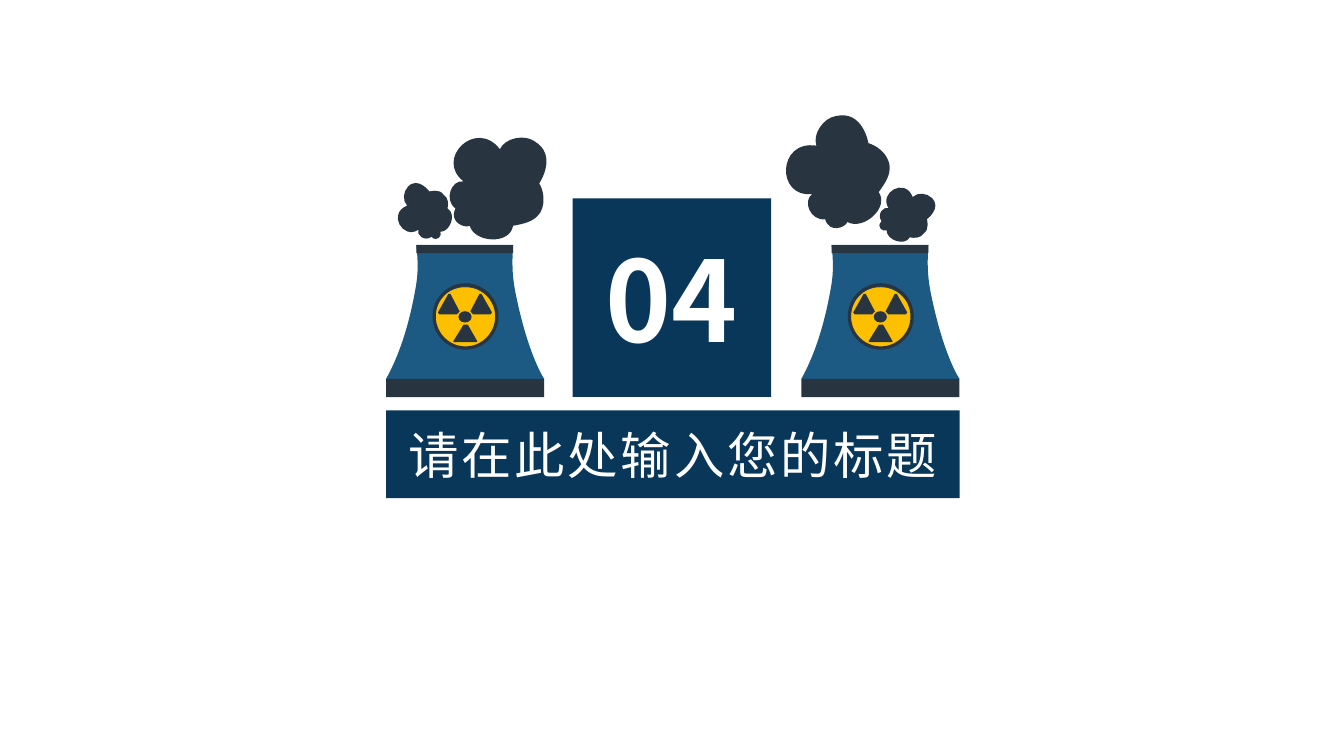
"""Build a section slide with two cooling towers, a number and a title."""
import pptx
import pptx.dml.color
import pptx.enum.shapes
import pptx.enum.text
import pptx.oxml.ns
import pptx.util
from lxml import etree

Pt = pptx.util.Pt
qn = pptx.oxml.ns.qn
KIND = pptx.enum.shapes.MSO_SHAPE
NAVY = pptx.dml.color.RGBColor(0x09, 0x37, 0x59)
BLUE = pptx.dml.color.RGBColor(0x1D, 0x5A, 0x83)
DARK = pptx.dml.color.RGBColor(0x28, 0x35, 0x41)
GOLD = pptx.dml.color.RGBColor(0xFC, 0xC0, 0x00)
WHITE = pptx.dml.color.RGBColor(0xFF, 0xFF, 0xFF)
FONT = "Noto Sans CJK SC"
GAP = 296.64
AXIS = 332.1

PUFF = [
    (381.6, 100.8), (374.4, 95.8), (360.7, 98.6), (357.1, 106.6),
    (339.8, 84.2), (310.3, 113.8), (331.2, 129.6),
    (322.6, 128.2), (316.8, 142.6), (325.4, 149),
    (320.4, 158.4), (331.9, 163.4), (335.5, 161.3),
    (339.1, 173.5), (364.3, 175), (366.5, 161.3),
    (374.4, 159.8), (381.6, 158.4), (385.9, 151.9),
    (391.7, 141.1), (385.2, 131), (385.2, 131),
    (385.2, 131), (398.9, 110.9), (381.6, 100.8),
]
WISP = [
    (291.6, 133.2), (288, 136.8), (287.3, 143.3), (290.9, 146.9),
    (276.5, 152.6), (288, 171.4), (298.8, 164.2),
    (297.4, 167.8), (303.1, 172.8), (308.2, 169.2),
    (312.5, 173.5), (316.1, 167.8), (314.6, 165.6),
    (321.8, 165.6), (326.2, 152.6), (319.7, 149),
    (320.4, 146.2), (320.4, 141.1), (316.8, 139),
    (313.9, 134.6), (306.7, 136.8), (306.7, 136.8),
    (306.7, 136.8), (298.8, 126), (291.6, 133.2),
]
WALL = [
    (367.9, 207.4), (365.8, 195.8), (365.8, 187.9), (366.5, 175),
    (366.5, 175), (297.4, 175), (297.4, 175),
    (298.8, 187.9), (298.8, 195.8), (296.6, 207.4),
    (289.4, 247.7), (277.9, 266.4), (275.8, 270.7),
    (275.8, 270.7), (388.8, 270.7), (388.8, 270.7),
    (385.9, 266.4), (375.8, 247.7), (367.9, 207.4),
]
BLADE = [(313.9, 224.6), (312.8, 223.2), (320.2, 210),
         (321.8, 210), (328.3, 222.5), (326.2, 224.6)]
FOOT = [(331.2, 231.8), (334.1, 231.8), (340.9, 243.7),
        (340.6, 244.4), (324, 244.4), (323.8, 243.7)]


def paint(shape, color):
    """Give a shape a plain fill without line or shadow."""
    shape.shadow.inherit = False
    shape.fill.solid()
    shape.fill.fore_color.rgb = color
    shape.line.fill.background()
    return shape


def block(owner, kind, place, color):
    """Add a preset shape at left, top, width, height."""
    return paint(owner.shapes.add_shape(kind, *map(Pt, place)), color)


def trace(owner, dots, color, right=0, down=0):
    """Add a closed outline, shifted by the given amounts."""
    spots = [(Pt(x + right), Pt(y + down)) for x, y in dots]
    pen = owner.shapes.build_freeform(*spots[0])
    pen.add_line_segments(spots[1:], close=True)
    return paint(pen.convert_to_shape(), color)


def bend(shape):
    """Turn each three straight steps of an outline into a cubic curve."""
    steps = list(shape._element.iter(qn("a:lnTo")))
    for i in range(0, len(steps) - 2, 3):
        first, *rest = steps[i:i + 3]
        arc = etree.Element(qn("a:cubicBezTo"))
        first.addprevious(arc)
        for step in (first, *rest):
            arc.append(step[0])
            step.getparent().remove(step)
    return shape


def label(shape, text, form, track=0):
    """Write centred text on a shape."""
    frame = shape.text_frame
    frame.word_wrap = True
    frame.vertical_anchor = pptx.enum.text.MSO_ANCHOR.MIDDLE
    for side in ("left", "top", "right", "bottom"):
        setattr(frame, "margin_" + side, Pt(0))
    line = frame.paragraphs[0]
    line.alignment = pptx.enum.text.PP_ALIGN.CENTER
    run = line.add_run()
    run.text = text
    run.font.color.rgb = WHITE
    for key, value in form.items():
        setattr(run.font, key, value)
    props = run.font._element
    props.set("spc", str(track * 100))
    east = etree.SubElement(props, qn("a:ea"))
    east.set("typeface", FONT)


def tower(slide, right, smoke):
    """Add a cooling tower with its smoke and warning sign."""
    group = slide.shapes.add_group_shape()
    for dots, shift, drop, angle in smoke:
        cloud = bend(trace(group, dots, DARK, shift, drop))
        cloud.rotation = angle
    bend(trace(group, WALL, BLUE, right))
    block(group, KIND.RECTANGLE, (275.8 + right, 270.7, 113, 13), DARK)
    block(group, KIND.RECTANGLE, (297.4 + right, 175, 69.1, 5.8), DARK)
    block(group, KIND.OVAL, (310.3 + right, 205.2, 43.9, 43.2), GOLD)
    mirror = [(2 * AXIS - x, y) for x, y in BLADE]
    for dots in (BLADE, mirror, FOOT):
        trace(group, dots, DARK, right)
    block(group, KIND.OVAL, (327.5 + right, 222.3, 9.4, 8.1), DARK)
    ring = block(group, KIND.DONUT, (308.9 + right, 202.3, 47.2, 47.5), DARK)
    ring.adjustments[0] = 0.05


def main():
    """Build and save the slide."""
    deck = pptx.Presentation()
    deck.slide_width, deck.slide_height = Pt(960), Pt(540)
    slide = deck.slides.add_slide(deck.slide_layouts[6])
    badge = block(slide, KIND.RECTANGLE, (409, 141.8, 141.8, 141.8), NAVY)
    label(badge, "04", {"size": Pt(80), "bold": True, "name": FONT})
    strip = block(slide, KIND.RECTANGLE, (275.8, 293.2, 409.7, 62.6), NAVY)
    label(strip, "请在此处输入您的标题", {"size": Pt(36), "name": FONT}, 2)
    tower(slide, 0, [(PUFF, 0, 0, 0), (WISP, 0, 0, 0)])
    tower(slide, GAP, [(PUFF, 242.64, -7.2, 316.4),
                       (WISP, 347.76, 1.44, 90)])
    deck.save("out.pptx")


if __name__ == "__main__":
    main()
